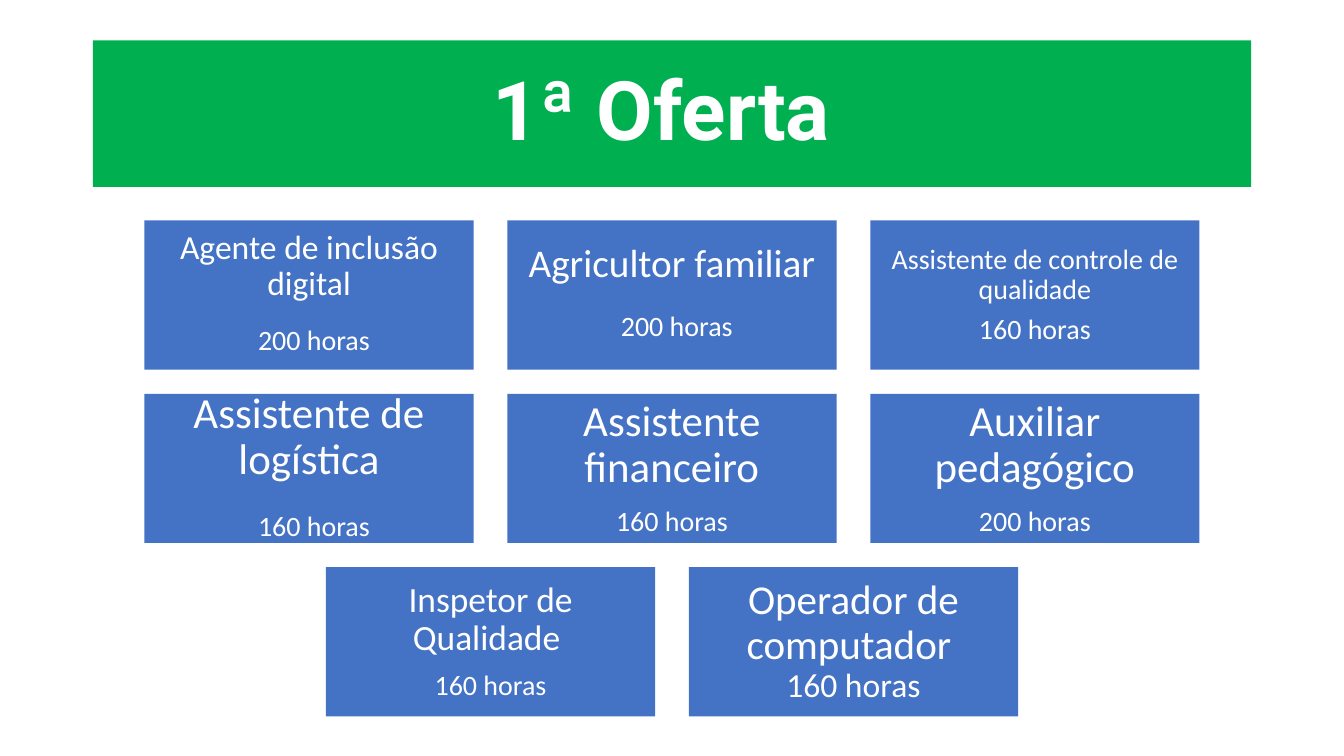
from dataclasses import dataclass

from pptx import Presentation
from pptx.dml.color import RGBColor
from pptx.enum.shapes import MSO_SHAPE
from pptx.enum.text import MSO_ANCHOR, MSO_AUTO_SIZE, PP_ALIGN
from pptx.util import Inches, Pt

GREEN = RGBColor(0x00, 0xB0, 0x50)
BLUE = RGBColor(0x44, 0x72, 0xC4)
WHITE = RGBColor(0xFF, 0xFF, 0xFF)

SLIDE_WIDTH = 10
SLIDE_HEIGHT = SLIDE_WIDTH * 9 / 16
CARD_WIDTH, CARD_HEIGHT = 2.45, 1.11
COLUMN_GAP = 0.25
FIRST_ROW_TOP, ROW_PITCH = 1.64, 1.29


@dataclass
class Course:
    name: str
    hours: str
    name_size: int
    hours_size: int = 15
    space_before: int = 8
    inset: float = 0.09
    lead_size: int = 0  # size of a space before the hours; 0 for none


COURSE_ROWS = [
    [
        Course("Agente de inclusão digital", "200 horas", 18,
               space_before=6, inset=0.07, lead_size=23),
        Course("Agricultor familiar", "200 horas", 21,
               space_before=7, lead_size=23),
        Course("Assistente de controle de qualidade", "160 horas", 15,
               space_before=5, inset=0.06),
    ],
    [
        Course("Assistente de logística", "160 horas", 23, lead_size=23),
        Course("Assistente financeiro", "160 horas", 23),
        Course("Auxiliar pedagógico", "200 horas", 23),
    ],
    [
        Course("Inspetor de Qualidade ", "160 horas", 19,
               space_before=7, inset=0.08),
        Course("Operador de computador ", "160 horas", 22,
               hours_size=18, space_before=0),
    ],
]


def fill_solid(shape, color):
    shape.fill.solid()
    shape.fill.fore_color.rgb = color


def prepare_text_frame(shape, horizontal_inset, vertical_inset):
    text_frame = shape.text_frame
    text_frame.word_wrap = True
    text_frame.auto_size = MSO_AUTO_SIZE.NONE
    text_frame.vertical_anchor = MSO_ANCHOR.MIDDLE
    text_frame.margin_left = text_frame.margin_right = Inches(horizontal_inset)
    text_frame.margin_top = text_frame.margin_bottom = Inches(vertical_inset)
    return text_frame


def format_paragraph(paragraph, space_before=0):
    paragraph.alignment = PP_ALIGN.CENTER
    paragraph.line_spacing = 0.9
    paragraph.space_before = Pt(space_before)


def add_run(paragraph, text, size, font_name="Calibri", bold=False):
    run = paragraph.add_run()
    run.text = text
    run.font.name = font_name
    run.font.size = Pt(size)
    run.font.bold = bold
    run.font.color.rgb = WHITE


def add_title(slide, text):
    title = slide.shapes.title
    title.left, title.top = Inches(0.69), Inches(0.3)
    title.width, title.height = Inches(8.62), Inches(1.09)
    fill_solid(title, GREEN)
    paragraph = prepare_text_frame(title, 0.07, 0.04).paragraphs[0]
    format_paragraph(paragraph)
    add_run(paragraph, text, 44, "Roboto", bold=True)


def add_course_card(slide, course, left, top):
    card = slide.shapes.add_shape(
        MSO_SHAPE.RECTANGLE, Inches(left), Inches(top),
        Inches(CARD_WIDTH), Inches(CARD_HEIGHT))
    card.shadow.inherit = False
    fill_solid(card, BLUE)
    card.line.fill.background()

    text_frame = prepare_text_frame(card, course.inset, course.inset)
    name_paragraph = text_frame.paragraphs[0]
    format_paragraph(name_paragraph)
    add_run(name_paragraph, course.name, course.name_size)

    hours_paragraph = text_frame.add_paragraph()
    format_paragraph(hours_paragraph, course.space_before)
    if course.lead_size:
        add_run(hours_paragraph, " ", course.lead_size)
    add_run(hours_paragraph, course.hours, course.hours_size)


def add_course_row(slide, courses, top):
    """Place the cards of one row, centred on the slide."""
    pitch = CARD_WIDTH + COLUMN_GAP
    row_width = len(courses) * pitch - COLUMN_GAP
    first_left = (SLIDE_WIDTH - row_width) / 2
    for column, course in enumerate(courses):
        add_course_card(slide, course, first_left + column * pitch, top)


def main():
    presentation = Presentation()
    presentation.slide_width = Inches(SLIDE_WIDTH)
    presentation.slide_height = Inches(SLIDE_HEIGHT)
    title_only_layout = presentation.slide_layouts[5]
    slide = presentation.slides.add_slide(title_only_layout)

    add_title(slide, "1ª Oferta ")
    for row, courses in enumerate(COURSE_ROWS):
        add_course_row(slide, courses, FIRST_ROW_TOP + row * ROW_PITCH)

    presentation.save("out.pptx")


if __name__ == "__main__":
    main()
